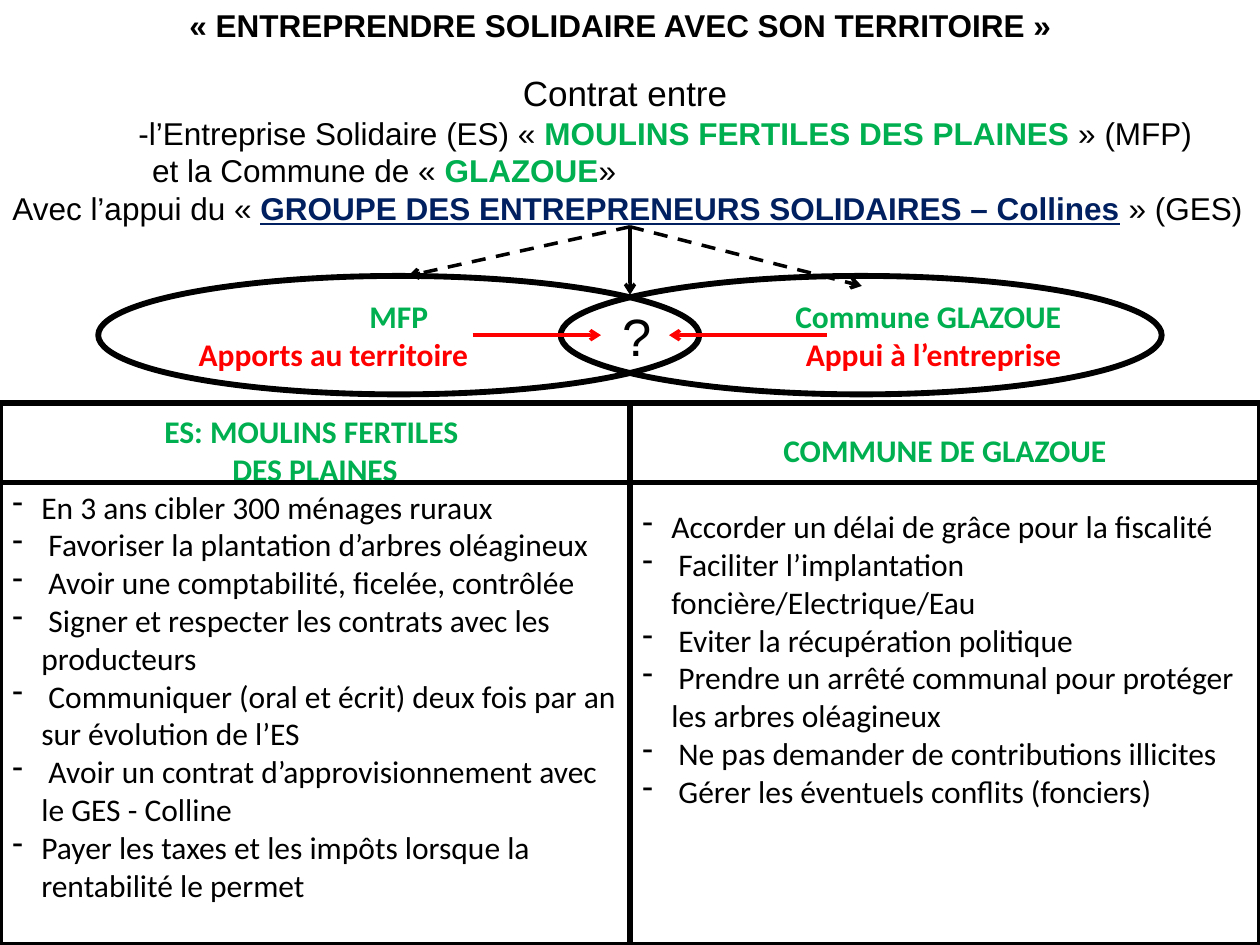
from pptx import Presentation
from pptx.util import Inches, Pt
from pptx.dml.color import RGBColor
from pptx.enum.shapes import MSO_SHAPE as Shape, MSO_CONNECTOR as Link
from pptx.enum.text import PP_ALIGN as Align, MSO_ANCHOR as Anchor, MSO_AUTO_SIZE as Fit
from pptx.enum.dml import MSO_LINE as Dash
from pptx.oxml.ns import qn
from lxml import etree

BLACK = RGBColor(0x00, 0x00, 0x00)
GREEN = RGBColor(0x00, 0xB0, 0x50)
RED = RGBColor(0xFF, 0x00, 0x00)
NAVY = RGBColor(0x00, 0x20, 0x60)
THICK = 3.35

TERMS = [
    ("MOULINS FERTILES DES PLAINES", "MFP"),
    ("GLAZOUE", "Commune GLAZOUE"),
]
FIRM_HEAD = ["ES: MOULINS FERTILES ", "DES PLAINES"]
FIRM_ITEMS = [
    "En 3 ans cibler 300 ménages ruraux",
    " Favoriser la plantation d’arbres oléagineux",
    " Avoir une comptabilité, ficelée, contrôlée",
    " Signer et respecter les contrats avec les producteurs",
    " Communiquer (oral et écrit) deux fois par an sur évolution de l’ES",
    " Avoir un contrat d’approvisionnement avec le GES - Colline",
    "Payer les taxes et les impôts lorsque la rentabilité le permet",
]
TOWN_HEAD = ["COMMUNE DE GLAZOUE"]
TOWN_ITEMS = [
    "Accorder un délai de grâce pour la fiscalité",
    " Faciliter l’implantation foncière/Electrique/Eau",
    " Eviter la récupération politique",
    " Prendre un arrêté communal pour protéger les arbres oléagineux",
    " Ne pas demander de contributions illicites",
    " Gérer les éventuels conflits (fonciers)",
]


def style(font, size=18, name="Arial", color=BLACK, bold=False):
    font.size, font.name, font.bold = Pt(size), name, bold
    font.color.rgb = color


def add_par(frame, first):
    return frame.paragraphs[0] if first else frame.add_paragraph()


def add_line(slide, start, end, color=BLACK, width=2, dash=False, arrow=True):
    line = slide.shapes.add_connector(Link.STRAIGHT, *map(Inches, start + end))
    line.line.color.rgb = color
    line.line.width = Pt(width)
    if dash:
        line.line.dash_style = Dash.DASH
    if arrow:
        tip = etree.SubElement(line.line._get_or_add_ln(), qn("a:tailEnd"))
        tip.set("type", "arrow")
    etree.SubElement(line._element.spPr, qn("a:effectLst"))


def add_frame(slide, kind, box):
    shape = slide.shapes.add_shape(kind, *map(Inches, box))
    shape.shadow.inherit = False
    shape.fill.background()
    shape.line.color.rgb = BLACK
    shape.line.width = Pt(THICK)
    shape.text_frame.word_wrap = True
    return shape.text_frame


def add_title(slide, box):
    title = slide.shapes.title
    title.left, title.top, title.width, title.height = map(Inches, box)
    frame = title.text_frame
    frame.text = "«\u00a0ENTREPRENDRE SOLIDAIRE AVEC SON TERRITOIRE\u00a0»"
    frame.auto_size = Fit.NONE
    frame.vertical_anchor = Anchor.MIDDLE
    frame.paragraphs[0].alignment = Align.CENTER
    style(frame.paragraphs[0].runs[0].font, bold=True)


def add_deal(slide, box):
    (firm, code), (town, _) = TERMS
    rows = [
        (0, 20, [("Contrat entre ", BLACK)]),
        (1, 18, [("-l’Entreprise Solidaire (ES) «\u00a0", BLACK), (firm, GREEN),
                 (f"\u00a0» ({code})", BLACK)]),
        (1.11, 18, [("et la Commune de «\u00a0", BLACK), (town, GREEN), ("»", BLACK)]),
        (0, 18, [("Avec l’appui du «\u00a0", BLACK),
                 ("GROUPE DES ENTREPRENEURS SOLIDAIRES – Collines", NAVY),
                 ("\u00a0» (GES)", BLACK)]),
    ]
    frame = slide.shapes.add_textbox(*map(Inches, box)).text_frame
    frame.word_wrap = True
    for i, (left, size, parts) in enumerate(rows):
        par = add_par(frame, i == 0)
        par.alignment = Align.LEFT if i else Align.CENTER
        if left:
            par._p.get_or_add_pPr().set("marL", str(Inches(left)))
        for text, color in parts:
            run = par.add_run()
            run.text = text
            style(run.font, size, color=color, bold=color != BLACK)
            if color == NAVY:
                run.font.underline = True


def add_oval(slide, box, rows):
    frame = add_frame(slide, Shape.OVAL, box)
    frame.vertical_anchor = Anchor.MIDDLE
    for i, (text, color, align) in enumerate(rows):
        par = add_par(frame, i == 0)
        par.text, par.alignment = text, align
        style(par.runs[0].font, name="Calibri", color=color, bold=True)


def add_venn(slide, box):
    left, top, width, height = box
    oval = 4.77
    mid = left + width / 2
    add_oval(slide, (left, top, oval, height),
             [(TERMS[0][1], GREEN, Align.CENTER),
              ("Apports au territoire", RED, Align.LEFT)])
    add_oval(slide, (left + width - oval, top, oval, height),
             [(TERMS[1][1], GREEN, Align.RIGHT),
              ("Appui à l’entreprise", RED, Align.RIGHT)])
    mark = slide.shapes.add_textbox(*map(Inches, (mid - 0.16, top + 0.17, 0.47, 0.61)))
    mark.text_frame.text = "?"
    style(mark.text_frame.paragraphs[0].runs[0].font, 30)

    hub = (mid, top - 0.39)
    add_line(slide, hub, (mid, top + 0.15))
    row = top + height / 2
    add_line(slide, (mid - 1.25, row), (mid - 0.23, row), RED)
    add_line(slide, (mid + 1.56, row), (mid + 0.31, row), RED)
    add_line(slide, hub, (mid - 1.76, top), dash=True)
    add_line(slide, hub, (mid + 1.84, top + 0.08), dash=True)


def add_column(slide, box, head, items, inset, gap):
    frame = add_frame(slide, Shape.RECTANGLE, box)
    frame.vertical_anchor = Anchor.TOP
    frame.margin_top = Inches(inset)
    for i, text in enumerate(head + items):
        par = add_par(frame, i == 0)
        par.text = text
        is_head = i < len(head)
        par.alignment = Align.CENTER if is_head else Align.LEFT
        if i == len(head):
            par.space_before = Pt(gap)
        if not is_head:
            props = par._p.get_or_add_pPr()
            props.set("marL", str(Inches(0.23)))
            props.set("indent", str(-Inches(0.23)))
            etree.SubElement(props, qn("a:buChar")).set("char", "-")
        style(par.runs[0].font, name="Calibri",
              color=GREEN if is_head else BLACK, bold=is_head)


def add_duties(slide, box):
    left, top, width, height = box
    half = width / 2
    add_column(slide, (left, top, half, height), FIRM_HEAD, FIRM_ITEMS, 0.07, 0)
    add_column(slide, (left + half, top, half, height), TOWN_HEAD, TOWN_ITEMS, 0.22, 22)
    rule = top + 0.63
    add_line(slide, (left, rule), (left + width, rule), width=THICK, arrow=False)


def main():
    deck = Presentation()
    deck.slide_width, deck.slide_height = Inches(10), Inches(7.5)
    slide = deck.slides.add_slide(deck.slide_layouts[5])
    add_title(slide, (0, 0, 9.85, 0.4))
    add_deal(slide, (0, 0.52, 10, 1.64))
    add_venn(slide, (0.78, 2.19, 8.44, 0.94))
    add_duties(slide, (0, 3.2, 10, 4.3))
    deck.save("out.pptx")


if __name__ == "__main__":
    main()
